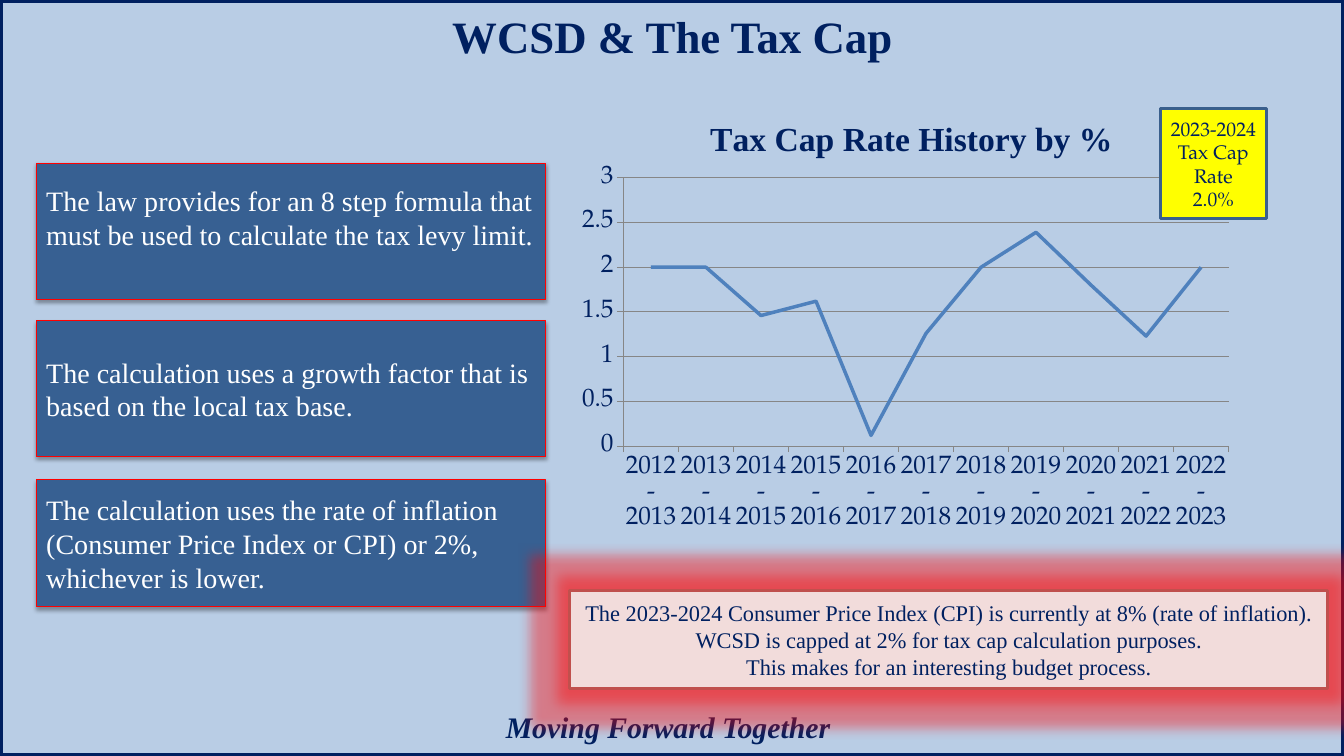
from lxml import etree
from pptx import Presentation
from pptx.chart.data import CategoryChartData
from pptx.dml.color import RGBColor
from pptx.enum.chart import XL_CHART_TYPE, XL_TICK_MARK
from pptx.enum.shapes import MSO_SHAPE
from pptx.enum.text import MSO_ANCHOR, PP_ALIGN
from pptx.oxml import parse_xml
from pptx.oxml.ns import nsdecls, qn
from pptx.util import Inches, Pt

# Content
TITLE = "WCSD & The Tax Cap"
MOTTO = "Moving Forward Together"
# text, top, height, bottom inset
FACTS = [
    ("The law provides for an 8 step formula that must be used to calculate the tax levy limit.",
     1.62, 1.35, 0.33),
    ("The calculation uses a growth factor that is based on the local tax base.",
     3.18, 1.35, 0.05),
    ("The calculation uses the rate of inflation (Consumer Price Index or CPI) or 2%, "
     "whichever is lower.", 4.76, 1.26, 0.05),
]
CHART_TITLE = "Tax Cap Rate History by %"
FIRST_YEAR = 2012
RATES = [2, 2, 1.46, 1.62, 0.12, 1.26, 2, 2.39, 1.8, 1.23, 2]
CURRENT_RATE = ["2023-2024 Tax Cap Rate", "2.0%"]
NOTE = [
    "The 2023-2024 Consumer Price Index (CPI) is currently at 8% (rate of inflation). "
    "WCSD is capped at 2% for tax cap calculation purposes.",
    "This makes for an interesting budget process.",
]

COLORS = {
    "background": "B9CDE5", "navy": "002060", "white": "FFFFFF", "fact": "376092",
    "red": "FF0000", "yellow": "FFFF00", "rate line": "3A5F8C", "series": "4F81BD",
    "note": "F2DCDB", "note line": "C0504D", "grid": "868686",
}
SERIF, PAGELLA = "Times New Roman", "TeX Gyre Pagella"
SHADOW = ('<a:outerShdw blurRad="39370" dist="22860" dir="5400000" rotWithShape="0">'
          '<a:srgbClr val="000000"><a:alpha val="35000"/></a:srgbClr></a:outerShdw>')
GLOW = ('<a:glow rad="228600"><a:srgbClr val="FF0000">'
        '<a:alpha val="40000"/></a:srgbClr></a:glow>')


def color(name):
    return RGBColor.from_string(COLORS[name])


def style_font(font, name, size, color_name, **formats):
    values = {"name": name, "size": Pt(size), **formats}
    for attribute, value in values.items():
        setattr(font, attribute, value)
    font.color.rgb = color(color_name)


def write(shape, lines, font, align=PP_ALIGN.CENTER, anchor=MSO_ANCHOR.MIDDLE, **frame_values):
    frame = shape.text_frame
    for attribute, value in {"word_wrap": True, "vertical_anchor": anchor, **frame_values}.items():
        setattr(frame, attribute, value)
    for index, line in enumerate(lines):
        paragraph = frame.paragraphs[0] if index == 0 else frame.add_paragraph()
        paragraph.alignment = align
        run = paragraph.add_run()
        run.text = line
        style_font(run.font, **font)


def add_box(box, fill, line, width, effect=None):
    shape = slide.shapes.add_shape(MSO_SHAPE.RECTANGLE, *map(Inches, box))
    shape.shadow.inherit = False
    if fill:
        shape.fill.solid()
        shape.fill.fore_color.rgb = color(fill)
    else:
        shape.fill.background()
    shape.line.color.rgb = color(line)
    shape.line.width = Pt(width)
    if effect:
        effects = shape._element.spPr.find(qn("a:effectLst"))
        effects.append(parse_xml(effect.replace(" ", f" {nsdecls('a')} ", 1)))
    return shape


def add_label(box, text, font, anchor):
    label = slide.shapes.add_textbox(*map(Inches, box))
    write(label, [text], font, anchor=anchor)


def place(parent, position, **fractions):
    """Give a chart part a fixed place, in fractions of the chart."""
    old = parent.find(qn("c:layout"))
    if old is not None:
        parent.remove(old)
    layout = etree.Element(qn("c:layout"))
    manual = etree.SubElement(layout, qn("c:manualLayout"))
    if "w" in fractions:
        etree.SubElement(manual, qn("c:layoutTarget")).set("val", "inner")
    for mode in ("xMode", "yMode"):
        etree.SubElement(manual, qn(f"c:{mode}")).set("val", "edge")
    for key, value in fractions.items():
        etree.SubElement(manual, qn(f"c:{key}")).set("val", str(value))
    parent.insert(position, layout)


# Slide
presentation = Presentation()
presentation.slide_width, presentation.slide_height = Inches(13.33), Inches(7.5)
slide = presentation.slides.add_slide(presentation.slide_layouts[6])
slide.background.fill.solid()
slide.background.fill.fore_color.rgb = color("background")

# Title
add_label((4.27, 0.03, 4.8, 0.64), TITLE,
          {"name": SERIF, "size": 32, "color_name": "navy", "bold": True}, MSO_ANCHOR.MIDDLE)

# Facts on the left
for text, top, height, inset in FACTS:
    fact = add_box((0.36, top, 5.05, height), "fact", "red", 0.75, SHADOW)
    write(fact, [text], {"name": SERIF, "size": 20, "color_name": "white"},
          align=PP_ALIGN.LEFT, margin_bottom=Inches(inset))

# Rate history chart
data = CategoryChartData()
data.categories = [f"{year}-{year + 1}" for year in range(FIRST_YEAR, FIRST_YEAR + len(RATES))]
data.add_series("Series 1", RATES)
chart = slide.shapes.add_chart(
    XL_CHART_TYPE.LINE, *map(Inches, (5.65, 0.92, 6.67, 4.44)), data).chart
chart.has_legend = False
chart.font.name, chart.font.size = "Arial", Pt(18)
chart.has_title = True
chart.chart_title.text_frame.text = CHART_TITLE
style_font(chart.chart_title.text_frame.paragraphs[0].runs[0].font,
           SERIF, 24, "navy", bold=True)
place(chart.chart_title._element, 1, x=0.2, y=0.04)
place(chart._chartSpace.chart.plotArea, 0, x=0.08, y=0.19, w=0.9, h=0.6)

plot = chart.plots[0]
plot.vary_by_categories = False
series = plot.series[0]
series.smooth = False
series.format.line.color.rgb = color("series")
series.format.line.width = Pt(2.5)

value_axis, category_axis = chart.value_axis, chart.category_axis
for attribute, value in {"minimum_scale": 0, "maximum_scale": 3, "major_unit": 0.5,
                         "has_major_gridlines": True}.items():
    setattr(value_axis, attribute, value)
for axis in (value_axis, category_axis):
    axis.major_tick_mark = XL_TICK_MARK.OUTSIDE
    style_font(axis.tick_labels.font, PAGELLA, 18, "navy")
for part in (value_axis, category_axis, value_axis.major_gridlines):
    part.format.line.color.rgb = color("grid")
    part.format.line.width = Pt(0.75)

# Current rate
rate = add_box((11.51, 1.08, 1.05, 1.09), "yellow", "rate line", 2)
write(rate, CURRENT_RATE, {"name": PAGELLA, "size": 14, "color_name": "navy"},
      margin_left=Inches(0.05), margin_right=Inches(0.05))

# Slide frame and motto
add_box((0, 0, 13.33, 7.5), None, "navy", 4.5)
add_label((4.18, 6.98, 4.89, 0.46), MOTTO,
          {"name": SERIF, "size": 21.3, "color_name": "navy", "bold": True, "italic": True},
          MSO_ANCHOR.TOP)

# Glowing note
note = add_box((5.65, 5.86, 7.52, 0.97), "note", "note line", 2, GLOW)
write(note, NOTE, {"name": SERIF, "size": 16, "color_name": "navy"})

presentation.save("out.pptx")
